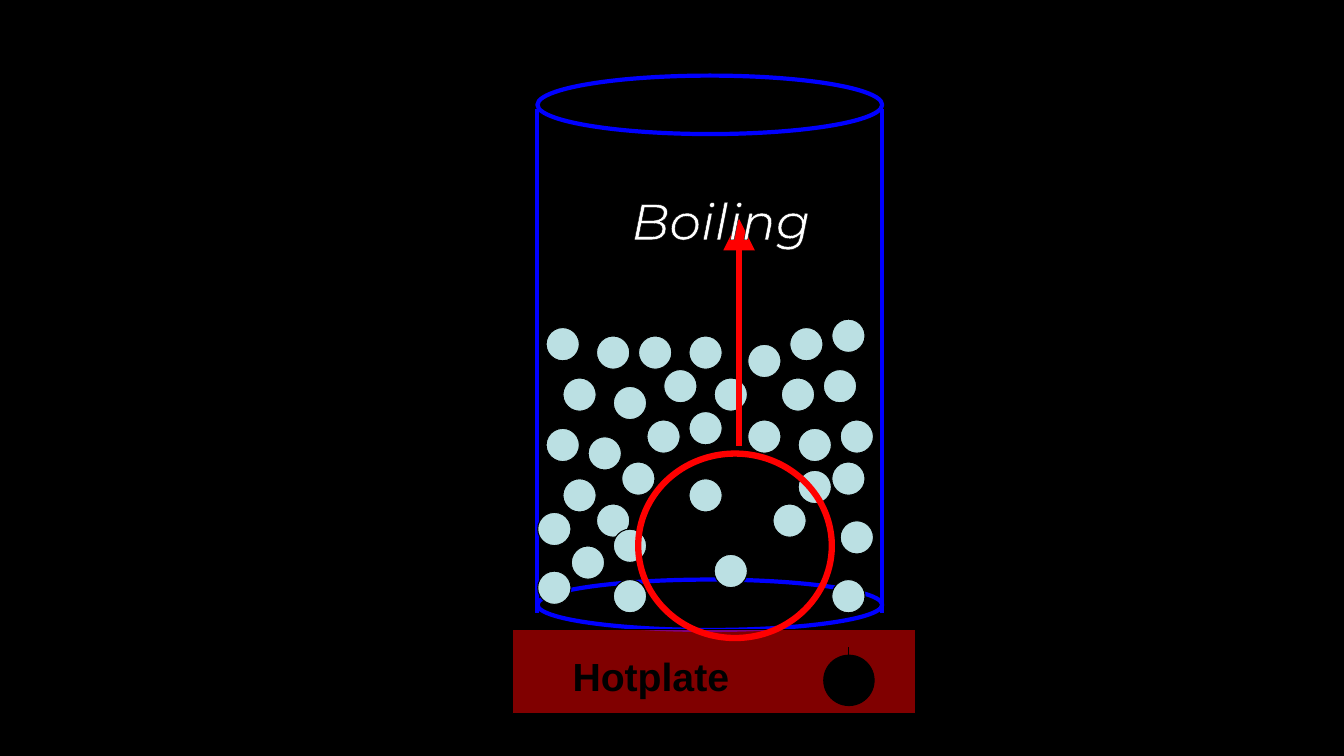
from pptx import Presentation
from pptx.dml.color import RGBColor
from pptx.enum.shapes import MSO_CONNECTOR, MSO_SHAPE as SHAPE
from pptx.enum.text import MSO_AUTO_SIZE as FIT, PP_ALIGN as ALIGN
from pptx.oxml import parse_xml
from pptx.oxml.ns import nsdecls, qn
from pptx.util import Inches, Pt

BLACK, WHITE, BLUE, RED, WATER = "000000", "FFFFFF", "0000FF", "FF0000", "BBE0E3"
GRID = 12  # molecules sit on a grid of twelfths of an inch

# Molecules as (left, top) in grid steps
LIQUID = [
    (65, 51), (64, 68), (93, 45), (73, 46), (73, 69), (71, 60), (67, 57),
    (64, 61), (79, 44), (74, 55), (98, 44), (100, 62), (99, 69), (77, 50),
    (95, 51), (85, 45), (89, 50), (99, 55), (70, 52), (100, 50), (67, 45),
    (82, 49), (68, 65), (89, 41), (73, 63), (95, 56), (82, 40), (76, 40),
]
SURFACE = [(94, 39), (99, 38), (71, 40), (65, 39)]
VAPOUR = [(85, 66), (82, 57), (92, 60)]


def rgb(color):
    return RGBColor.from_string(color)


def add_outline(slide, kind, box, line, width, fill=None, alpha=None):
    shape = slide.shapes.add_shape(kind, *map(Inches, box))
    shape.shadow.inherit = False
    shape.line.color.rgb = rgb(line)
    shape.line.width = Pt(width)
    if fill is None:
        shape.fill.background()
        return
    shape.fill.solid()
    shape.fill.fore_color.rgb = rgb(fill)
    if alpha is not None:
        color = shape.fill._xPr.find(".//" + qn("a:srgbClr"))
        color.append(parse_xml(f'<a:alpha {nsdecls("a")} val="{alpha * 1000}"/>'))


def add_line(slide, start, end, color, width, arrow=False):
    line = slide.shapes.add_connector(
        MSO_CONNECTOR.STRAIGHT, *map(Inches, start + end))
    line.line.color.rgb = rgb(color)
    line.line.width = Pt(width)
    if arrow:
        line.line._get_or_add_ln().append(parse_xml(
            f'<a:tailEnd {nsdecls("a")} type="triangle" w="lg" len="lg"/>'))
    line._element.spPr.append(parse_xml(f'<a:effectLst {nsdecls("a")}/>'))


def add_label(slide, box, text, font_name, size, color, wrap=True, fit=FIT.NONE,
              align=ALIGN.LEFT, bold=False, italic=False):
    frame = slide.shapes.add_textbox(*map(Inches, box)).text_frame
    frame.word_wrap = wrap
    frame.auto_size = fit
    label = frame.paragraphs[0]
    label.text = text
    label.alignment = align
    font = label.font
    font.name, font.size, font.bold, font.italic = font_name, Pt(size), bold, italic
    font.color.rgb = rgb(color)
    return label


def outline_letters(label, color, width):
    for run in label.runs:
        run._r.get_or_add_rPr().insert(0, parse_xml(
            f'<a:ln {nsdecls("a")} w="{Pt(width)}"><a:solidFill>'
            f'<a:srgbClr val="{color}"/></a:solidFill></a:ln>'))


def add_molecules(slide, places):
    for left, top in places:
        add_outline(slide, SHAPE.OVAL, (left / GRID, top / GRID, 0.33, 0.33),
                    BLACK, 0.75, WATER)


def add_beaker(slide):
    left, right = 5.33, 8.75
    add_outline(slide, SHAPE.OVAL, (left, 5.75, right - left, 0.5), BLUE, 3)
    for side in (right, left):
        add_line(slide, (side, 1.08), (side, 6.08), BLUE, 3)
    add_outline(slide, SHAPE.OVAL, (left, 0.75, right - left, 0.58), BLUE, 3)


def add_hotplate(slide):
    add_outline(slide, SHAPE.RECTANGLE, (5.08, 6.25, 4, 0.83), BLACK, 0.75, RED, 50)
    add_label(slide, (5.58, 6.42, 1.92, 0.57), "Hotplate", "Arial", 28, BLACK,
              fit=FIT.SHAPE_TO_FIT_TEXT, bold=True)
    # Control knob and its pointer
    add_outline(slide, SHAPE.OVAL, (8.17, 6.5, 0.5, 0.5), BLACK, 0.75, BLACK)
    add_line(slide, (8.42, 6.42), (8.42, 6.67), BLACK, 0.75)


def main():
    deck = Presentation()
    deck.slide_width, deck.slide_height = Inches(13.33), Inches(7.5)
    slide = deck.slides.add_slide(deck.slide_layouts[6])
    slide.background.fill.solid()
    slide.background.fill.fore_color.rgb = rgb(BLACK)

    add_beaker(slide)
    add_molecules(slide, LIQUID)
    # Rising bubble
    add_line(slide, (7.33, 4.42), (7.33, 2.17), RED, 4.5, arrow=True)
    add_hotplate(slide)
    add_outline(slide, SHAPE.OVAL, (6.33, 4.5, 1.92, 1.83), RED, 4.5)
    add_molecules(slide, SURFACE + VAPOUR)
    # Title
    title = add_label(slide, (3.83, 1.83, 6.64, 1.52), "Boiling", "Montserrat", 36,
                      WHITE, wrap=False, align=ALIGN.CENTER, italic=True)
    outline_letters(title, BLACK, 0.75)

    deck.save("out.pptx")


if __name__ == "__main__":
    main()
